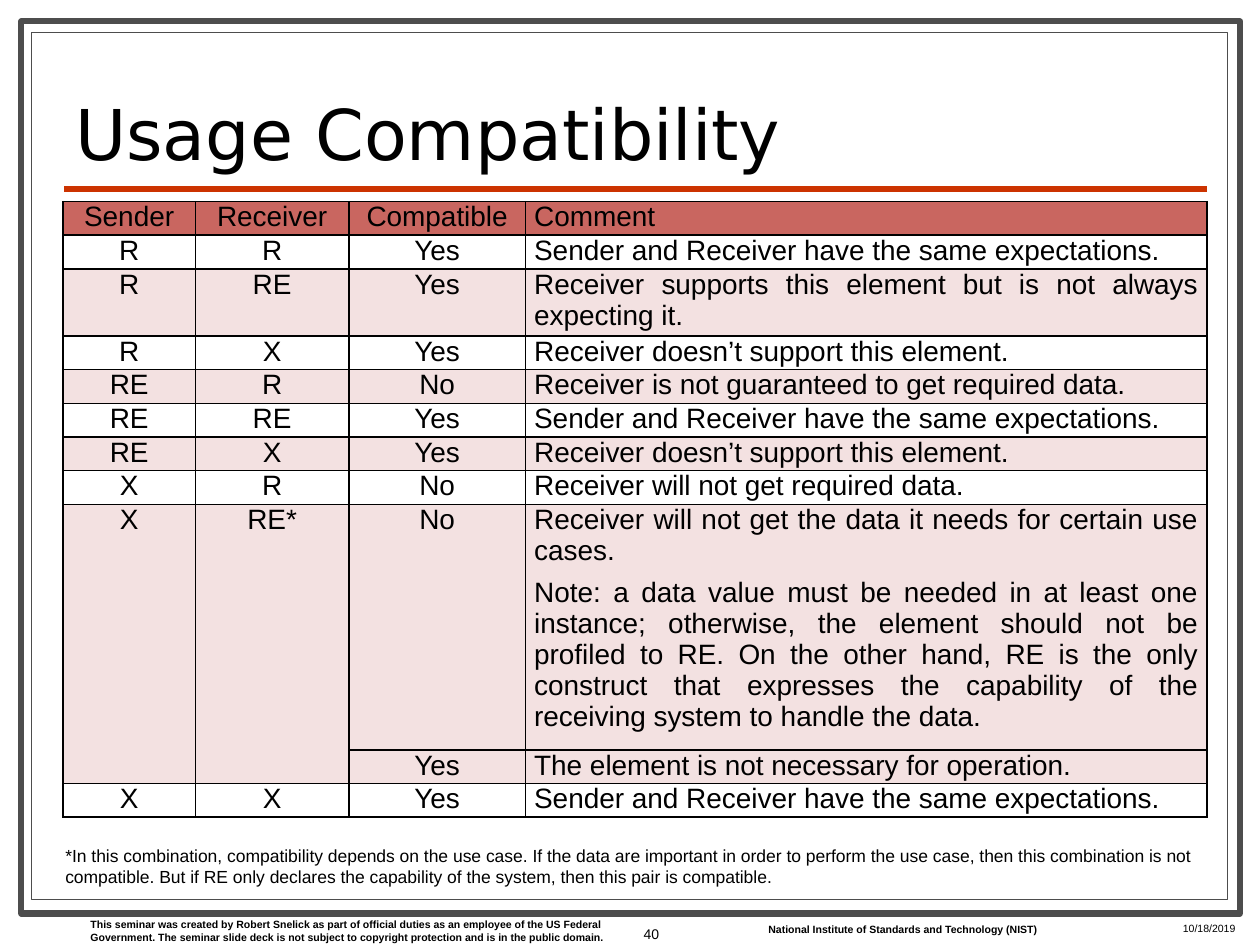
from lxml import etree
from pptx import Presentation
from pptx.dml.color import RGBColor
from pptx.enum import shapes, text
from pptx.oxml.ns import qn
from pptx.util import Inches, Pt

BLACK = RGBColor(0, 0, 0)
WHITE = RGBColor(255, 255, 255)
FRAME_GREY = RGBColor(0x4D, 0x4D, 0x4D)
RULE_RED = RGBColor(0xCC, 0x33, 0x00)
HEADER_RED = RGBColor(0xC9, 0x66, 0x60)
BAND_PINK = RGBColor(0xF3, 0xE1, 0xE1)

CENTER, JUSTIFY, RIGHT = text.PP_ALIGN.CENTER, text.PP_ALIGN.JUSTIFY, text.PP_ALIGN.RIGHT
MIDDLE, BOTTOM = text.MSO_ANCHOR.MIDDLE, text.MSO_ANCHOR.BOTTOM

TITLE = "Usage Compatibility"
FOOTNOTE = (
    "*In this combination, compatibility depends on the use case. If the data are important in order "
    "to perform the use case, then this combination is not compatible. But if RE only declares the "
    "capability of the system, then this pair is compatible."
)
DISCLAIMER = (
    "This seminar was created by Robert Snelick as part of official duties as an employee of the US "
    "Federal Government. The seminar slide deck is not subject to copyright protection and is in the "
    "public domain."
)
INSTITUTE = "National Institute of Standards and Technology (NIST)"
DATE = "10/18/2019"
PAGE = "40"

SAME = "Sender and Receiver have the same expectations."
UNSUPPORTED = "Receiver doesn’t support this element."
# Sender, receiver, compatible, comment paragraphs; no sender means the pair above continues.
ROWS = [
    ("Sender", "Receiver", "Compatible", ["Comment"]),
    ("R", "R", "Yes", [SAME]),
    ("R", "RE", "Yes", ["Receiver supports this element but is not always expecting it."]),
    ("R", "X", "Yes", [UNSUPPORTED]),
    ("RE", "R", "No", ["Receiver is not guaranteed to get required data."]),
    ("RE", "RE", "Yes", [SAME]),
    ("RE", "X", "Yes", [UNSUPPORTED]),
    ("X", "R", "No", ["Receiver will not get required data."]),
    ("X", "RE*", "No", [
        "Receiver will not get the data it needs for certain use cases.",
        "Note: a data value must be needed in at least one instance; otherwise, the element should "
        "not be profiled to RE. On the other hand, RE is the only construct that expresses the "
        "capability of the receiving system to handle the data.",
    ]),
    (None, None, "Yes", ["The element is not necessary for operation."]),
    ("X", "X", "Yes", [SAME]),
]
COLUMN_WIDTHS = [1.05, 1.22, 1.4, 5.41]
ROW_HEIGHT = 0.24  # one line; rows grow with their text


def add_run(paragraph, words, size, font="Arial", bold=False):
    run = paragraph.add_run()
    run.text = words
    run.font.size = Pt(size)
    run.font.name = font
    run.font.bold = bold
    run.font.color.rgb = BLACK


def add_label(slide, box, words, size, font="Arial", bold=False, align=None, anchor=None, spacing=None):
    frame = slide.shapes.add_textbox(*map(Inches, box)).text_frame
    frame.word_wrap = True
    if anchor is not None:
        frame.vertical_anchor = anchor
    paragraph = frame.paragraphs[0]
    paragraph.alignment = align
    paragraph.line_spacing = spacing
    add_run(paragraph, words, size, font, bold)


def add_frame(slide, box, weight):
    frame = slide.shapes.add_shape(shapes.MSO_SHAPE.RECTANGLE, *map(Inches, box))
    frame.shadow.inherit = False
    frame.fill.solid()
    frame.fill.fore_color.rgb = WHITE
    frame.line.color.rgb = FRAME_GREY
    frame.line.width = Pt(weight)


def add_title_rule(slide):
    rule = slide.shapes.add_connector(
        shapes.MSO_CONNECTOR.STRAIGHT, *map(Inches, (0.51, 1.5, 9.58, 1.5)))
    rule.line.color.rgb = RULE_RED
    rule.line.width = Pt(3)
    etree.SubElement(rule._element.spPr, qn("a:effectLst"))


def style_cell(cell, fill):
    """Set insets, 1 pt black borders and fill."""
    cell.margin_left = cell.margin_right = Inches(0.07)
    cell.margin_top = cell.margin_bottom = 0
    properties = cell._tc.get_or_add_tcPr()
    for side in ("lnL", "lnR", "lnT", "lnB"):
        border = etree.SubElement(properties, qn(f"a:{side}"), w=str(Pt(1)))
        solid = etree.SubElement(border, qn("a:solidFill"))
        etree.SubElement(solid, qn("a:srgbClr"), val=str(BLACK))
    cell.fill.solid()
    cell.fill.fore_color.rgb = fill


def fill_cell(cell, paragraphs, align):
    for i, words in enumerate(paragraphs):
        paragraph = cell.text_frame.add_paragraph() if i else cell.text_frame.paragraphs[0]
        paragraph.alignment = align
        paragraph.space_before = Pt(3 if i else 0)
        paragraph.space_after = Pt(3)
        add_run(paragraph, words, 16)


def add_usage_table(slide):
    table = slide.shapes.add_table(
        len(ROWS), len(COLUMN_WIDTHS), Inches(0.5), Inches(1.6),
        Inches(sum(COLUMN_WIDTHS)), Inches(ROW_HEIGHT * len(ROWS))).table
    table.first_row = table.horz_banding = False
    for column, width in zip(table.columns, COLUMN_WIDTHS):
        column.width = Inches(width)
    pair = 0
    for r, (sender, receiver, compatible, comment) in enumerate(ROWS):
        if r and sender:
            pair += 1
        fill = HEADER_RED if r == 0 else WHITE if pair % 2 else BAND_PINK
        for c, content in enumerate(([sender], [receiver], [compatible], comment)):
            cell = table.cell(r, c)
            style_cell(cell, fill)
            if content == [None]:
                table.cell(r - 1, c).merge(cell)
            else:
                fill_cell(cell, content, JUSTIFY if c == 3 else CENTER)


def main():
    deck = Presentation()
    deck.slide_width, deck.slide_height = Inches(10), Inches(7.5)
    slide = deck.slides.add_slide(deck.slide_layouts[6])
    add_frame(slide, (0.17, 0.17, 9.67, 7.08), 3.5)
    add_frame(slide, (0.25, 0.26, 9.49, 6.88), 0.75)
    add_title_rule(slide)
    add_label(slide, (0.62, 7.24, 4.33, 0.3), DISCLAIMER, 6, bold=True)
    add_label(slide, (6, 7.28, 2.38, 0.2), INSTITUTE, 6, bold=True)
    add_label(slide, (0.5, 0.53, 8.92, 0.9), TITLE, 40, "DejaVu Sans", anchor=BOTTOM, spacing=0.8)
    add_label(slide, (9.29, 7.27, 0.63, 0.16), DATE, 6)
    add_label(slide, (4.75, 7.15, 0.58, 0.52), PAGE, 8, align=RIGHT, anchor=MIDDLE)
    add_usage_table(slide)
    add_label(slide, (0.42, 6.66, 9.17, 0.44), FOOTNOTE, 10)
    deck.save("out.pptx")


if __name__ == "__main__":
    main()
